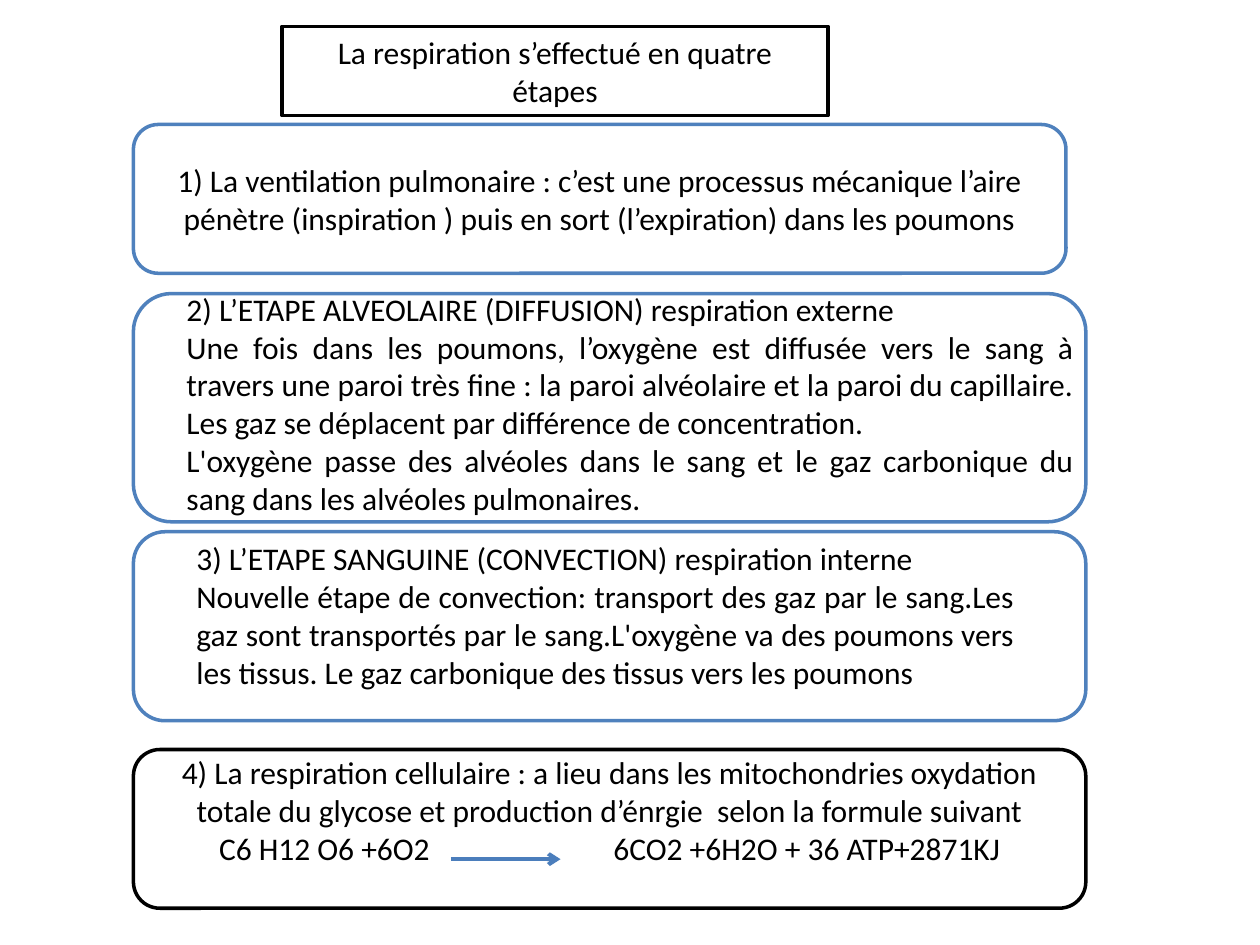
from dataclasses import dataclass

from lxml.etree import SubElement
from pptx import Presentation
from pptx.dml.color import RGBColor
from pptx.enum.shapes import MSO_CONNECTOR, MSO_SHAPE
from pptx.enum.text import MSO_ANCHOR, PP_ALIGN
from pptx.oxml.ns import qn
from pptx.util import Cm, Pt


@dataclass(frozen=True)
class Theme:
    font: str = "Calibri"
    text_size: Pt = Pt(18)
    outline_width: Pt = Pt(2)
    arrow_width: Pt = Pt(2.25)
    black: RGBColor = RGBColor(0x00, 0x00, 0x00)
    white: RGBColor = RGBColor(0xFF, 0xFF, 0xFF)
    blue: RGBColor = RGBColor(0x4F, 0x81, 0xBD)
    arrow_blue: RGBColor = RGBColor(0x4B, 0x7E, 0xBC)


THEME = Theme()
BOX_LEFT = 2.69
STEP_WIDTH = 19.2
# Bottom inset that lifts the text half a line above the middle
RAISED_INSET = 0.89

TITLE = "La respiration s’effectué en quatre étapes"
VENTILATION = [
    "1) La ventilation pulmonaire : c’est une processus mécanique l’aire "
    "pénètre (inspiration ) puis en sort (l’expiration) dans les poumons",
]
ALVEOLAR = [
    "2) L’ETAPE ALVEOLAIRE (DIFFUSION) respiration externe",
    "Une fois dans les poumons, l’oxygène est diffusée vers le sang à travers "
    "une paroi très fine : la paroi alvéolaire et la paroi du capillaire. "
    "Les gaz se déplacent par différence de concentration.",
    "L'oxygène passe des alvéoles dans le sang et le gaz carbonique du sang "
    "dans les alvéoles pulmonaires.",
]
BLOOD = [
    "3) L’ETAPE SANGUINE (CONVECTION) respiration interne",
    "Nouvelle étape de convection: transport des gaz par le sang.Les gaz sont "
    "transportés par le sang.L'oxygène va des poumons vers les tissus. "
    "Le gaz carbonique des tissus vers les poumons",
]
CELLULAR = [
    "4) La respiration cellulaire : a lieu dans les mitochondries oxydation "
    "totale du glycose et production d’énrgie  selon la formule suivant",
    "\tC6 H12 O6 +6O2\t6CO2 +6H2O + 36 ATP+2871KJ",
]


def write_text(shape, lines, alignment, bottom_inset=0.13):
    frame = shape.text_frame
    frame.word_wrap = True
    frame.vertical_anchor = MSO_ANCHOR.MIDDLE
    frame.margin_bottom = Cm(bottom_inset)
    for index, line in enumerate(lines):
        paragraph = frame.paragraphs[0] if index == 0 else frame.add_paragraph()
        paragraph.text = line
        paragraph.alignment = alignment
        paragraph.font.name = THEME.font
        paragraph.font.size = THEME.text_size
        paragraph.font.color.rgb = THEME.black


def style_box(shape, line_color):
    shape.fill.solid()
    shape.fill.fore_color.rgb = THEME.white
    shape.line.color.rgb = line_color
    shape.line.width = THEME.outline_width


def add_title(slide, left, top, width, height):
    title = slide.shapes.title
    title.left, title.top = Cm(left), Cm(top)
    title.width, title.height = Cm(width), Cm(height)
    geometry = SubElement(title.element.spPr, qn("a:prstGeom"), prst="roundRect")
    SubElement(geometry, qn("a:avLst"))
    style_box(title, THEME.black)
    write_text(title, [TITLE], PP_ALIGN.CENTER)


def add_step_box(slide, top, height, width=STEP_WIDTH, line_color=THEME.blue):
    box = slide.shapes.add_shape(
        MSO_SHAPE.ROUNDED_RECTANGLE, Cm(BOX_LEFT), Cm(top), Cm(width), Cm(height)
    )
    box.shadow.inherit = False
    style_box(box, line_color)
    return box


def add_text(slide, left, top, width, height, lines, bottom_inset=0.13):
    box = slide.shapes.add_textbox(Cm(left), Cm(top), Cm(width), Cm(height))
    write_text(box, lines, PP_ALIGN.JUSTIFY, bottom_inset)


def set_tab_stops(paragraph, positions):
    paragraph.alignment = PP_ALIGN.LEFT
    properties = paragraph._p.get_or_add_pPr()
    tabs = SubElement(properties, qn("a:tabLst"))
    # Tab stops come before the default run properties
    properties.insert(0, tabs)
    for position in positions:
        SubElement(tabs, qn("a:tab"), pos=str(Cm(position)), algn="l")


def add_arrow(slide, start, end, y):
    arrow = slide.shapes.add_connector(
        MSO_CONNECTOR.STRAIGHT, Cm(start), Cm(y), Cm(end), Cm(y)
    )
    arrow.line.color.rgb = THEME.arrow_blue
    arrow.line.width = THEME.arrow_width
    SubElement(arrow.line._get_or_add_ln(), qn("a:tailEnd"), type="arrow")
    SubElement(arrow.element.spPr, qn("a:effectLst"))


def main():
    presentation = Presentation()
    presentation.slide_width = Cm(25.4)
    presentation.slide_height = Cm(19.05)
    slide = presentation.slides.add_slide(presentation.slide_layouts[5])

    # Heading
    add_title(slide, 5.69, 0.53, 11, 1.8)

    # Step 1: ventilation
    ventilation = add_step_box(slide, 2.51, 3, width=18.8)
    write_text(ventilation, VENTILATION, PP_ALIGN.CENTER)

    # Step 2: diffusion in the alveoli
    add_step_box(slide, 5.92, 4.6)
    add_text(slide, 3.51, 5.69, 18.39, 4.88, ALVEOLAR)

    # Step 3: transport by the blood
    add_step_box(slide, 10.72, 3.81)
    add_text(slide, 3.71, 10.72, 16.99, 4.11, BLOOD, RAISED_INSET)

    # Step 4: cellular respiration and its formula
    cellular = add_step_box(slide, 15.11, 3.2, line_color=THEME.black)
    write_text(cellular, CELLULAR, PP_ALIGN.CENTER, RAISED_INSET)
    set_tab_stops(cellular.text_frame.paragraphs[-1], [1.32, 9.27])
    add_arrow(slide, 9.09, 11.3, 17.32)

    presentation.save("out.pptx")


if __name__ == "__main__":
    main()
